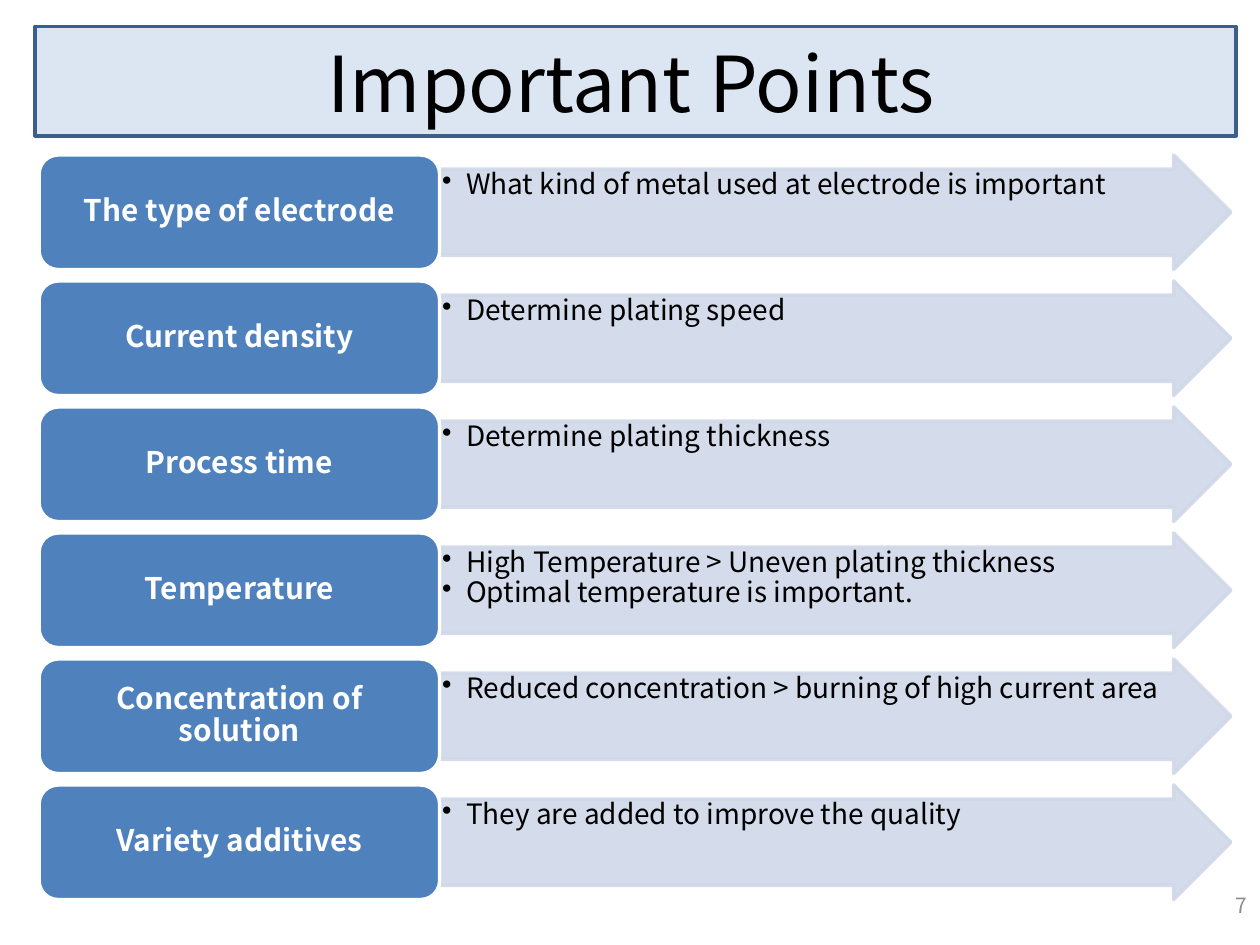
"""Build the "Important Points" slide: six labelled arrows under a title banner."""
from lxml.etree import SubElement
from pptx import Presentation
from pptx.dml.color import RGBColor
from pptx.enum.shapes import MSO_SHAPE
from pptx.enum.text import MSO_ANCHOR, PP_ALIGN
from pptx.oxml.ns import qn
from pptx.util import Inches, Pt


def add_box(s, kind, at, fill, line, alpha=None):
    sp = s.shapes.add_shape(kind, *[Inches(v) for v in at])
    sp.shadow.inherit = False
    sp.line.width = Pt(2)
    for fmt, color in ((sp.fill, fill), (sp.line.fill, line)):
        fmt.solid()
        fmt.fore_color.rgb = RGBColor.from_string(color)
    if alpha:
        for clr in sp._element.spPr.iter(qn("a:srgbClr")):
            SubElement(clr, qn("a:alpha"), val=str(alpha * 1000))
    return sp


def set_text(sp, text, size, color, bold=False, align=PP_ALIGN.CENTER,
             anchor=MSO_ANCHOR.MIDDLE, inset=(0.1, 0.05), spacing=None, bullet=False):
    tf = sp.text_frame
    tf.text = text
    tf.word_wrap = True
    tf.vertical_anchor = anchor
    tf.margin_left = tf.margin_right = Inches(inset[0])
    tf.margin_top = tf.margin_bottom = Inches(inset[1])
    for p in tf.paragraphs:
        p.alignment = align
        p.line_spacing = spacing
        if bullet:
            pPr = p._p.get_or_add_pPr()
            pPr.set("marL", str(Inches(0.19)))
            pPr.set("indent", str(-Inches(0.19)))
            SubElement(pPr, qn("a:buChar"), char="•")
        for r in p.runs:
            r.font.name = "Noto Sans CJK KR"
            r.font.size = Pt(size)
            r.font.bold = bold
            r.font.color.rgb = RGBColor.from_string(color)


prs = Presentation()
prs.slide_width, prs.slide_height = Inches(10), Inches(7.5)
s = prs.slides.add_slide(prs.slide_layouts[5])

points = [
    ("The type of electrode", "What kind of metal used at electrode is important"),
    ("Current density", "Determine plating speed"),
    ("Process time", "Determine plating thickness"),
    ("Temperature", "High Temperature > Uneven plating thickness\n"
                    "Optimal temperature is important."),
    ("Concentration of solution", "Reduced concentration > burning of high current area"),
    ("Variety additives", "They are added to improve the quality"),
]
for i, (label, detail) in enumerate(points):
    top = 1.23 + i
    arrow = add_box(s, MSO_SHAPE.RIGHT_ARROW, (3.5, top, 6.27, 0.91),
                    "D0D8E8", "D0D8E8", alpha=90)
    arrow.adjustments[0], arrow.adjustments[1] = 0.75, 0.5
    set_text(arrow, detail, 16, "000000", align=PP_ALIGN.LEFT, anchor=MSO_ANCHOR.TOP,
             inset=(0.01, 0.01), spacing=0.9, bullet=True)
    box = add_box(s, MSO_SHAPE.ROUNDED_RECTANGLE, (0.31, top, 3.18, 0.91),
                  "4F81BD", "FFFFFF")
    set_text(box, label, 17, "FFFFFF", bold=True, inset=(0.07, 0.04), spacing=0.9)

add_box(s, MSO_SHAPE.RECTANGLE, (0.28, 0.21, 9.53, 0.87), "DCE6F2", "3A5F8C")
title = s.shapes.title
title.left, title.top = Inches(0.51), Inches(0.02)
title.width, title.height = Inches(9), Inches(1.25)
set_text(title, "Important Points", 44, "000000")
s.shapes._spTree.append(title._element)

number = s.shapes.add_textbox(Inches(7.67), Inches(6.98), Inches(2.33), Inches(0.4))
set_text(number, "7", 12, "8C8C8C", align=PP_ALIGN.RIGHT)

prs.save("out.pptx")
